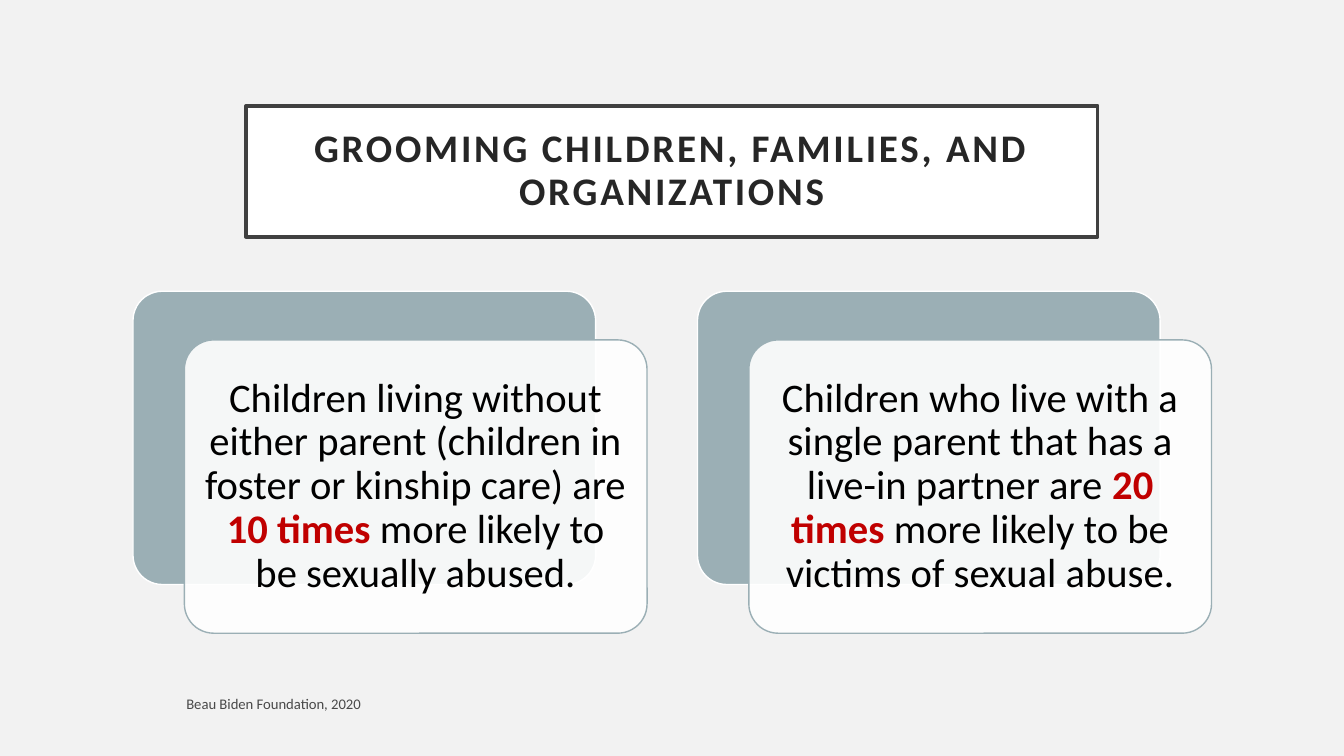
from lxml.etree import SubElement
from pptx import Presentation
from pptx.dml.color import RGBColor
from pptx.enum.shapes import MSO_SHAPE
from pptx.enum.text import MSO_ANCHOR, MSO_AUTO_SIZE, PP_ALIGN
from pptx.oxml.ns import qn
from pptx.util import Pt


def paint(fill, color):
    fill.solid()
    fill.fore_color.rgb = RGBColor.from_string(color)


def set_text(frame, inset, runs, size, color, align):
    frame.word_wrap = True
    frame.auto_size = MSO_AUTO_SIZE.NONE
    frame.vertical_anchor = MSO_ANCHOR.MIDDLE
    frame.margin_left = frame.margin_right = Pt(inset)
    frame.margin_top = frame.margin_bottom = Pt(inset)
    paragraph = frame.paragraphs[0]
    paragraph.alignment = align
    paragraph.line_spacing = 0.9
    paragraph.space_before = Pt(0)
    paragraph.font.name = "Calibri"
    paragraph.font.size = Pt(size)
    paint(paragraph.font.fill, color)
    for text in runs:
        paragraph.add_run().text = text
    return paragraph


presentation = Presentation()
presentation.slide_width = Pt(960)
presentation.slide_height = Pt(540)
slide = presentation.slides.add_slide(presentation.slide_layouts[5])
paint(slide.background.fill, "F2F2F2")

title = slide.shapes.title
title.left, title.top, title.width, title.height = Pt(175.7), Pt(75.6), Pt(608.4), Pt(93.6)
paint(title.fill, "FFFFFF")
paint(title.line.fill, "404040")
title.line.width = Pt(2.5)
heading = set_text(title.text_frame, 14.4, ["GROOMING CHILDREN, FAMILIES, AND ORGANIZATIONS"],
                   27.9, "262626", PP_ALIGN.CENTER)
heading.font.bold = True
heading.runs[0].font._element.set("spc", "200") if hasattr(heading.runs[0].font, "_element") \
    else heading.runs[0]._r.get_or_add_rPr().set("spc", "200")

findings = [
    ("Children living without either parent (children in foster or kinship care) are ",
     "10 times ", "more likely to be sexually abused."),
    ("Children who live with a single parent that has a live-in partner are ",
     "20 times ", "more likely to be victims of sexual abuse."),
]
card_width, card_height = 330.5, 209.5
for column, finding in enumerate(findings):
    left, top = 95 + column * 403.2, 208
    layers = [(left, top, "9BAFB5", "FFFFFF"),
              (left + 36.7, top + 34.8, "FFFFFF", "9BAFB5")]
    for x, y, fill_color, line_color in layers:
        card = slide.shapes.add_shape(MSO_SHAPE.ROUNDED_RECTANGLE, Pt(x), Pt(y),
                                      Pt(card_width), Pt(card_height))
        card.adjustments[0] = 0.1
        card.shadow.inherit = False
        paint(card.fill, fill_color)
        paint(card.line.fill, line_color)
        card.line.width = Pt(1)
    front_color = card._element.spPr.find(qn("a:solidFill"))[0]
    SubElement(front_color, qn("a:alpha"), val="90000")
    statement = set_text(card.text_frame, 8.6, finding, 29, "000000", PP_ALIGN.CENTER)
    multiplier = statement.runs[1].font
    multiplier.bold = True
    paint(multiplier.fill, "C00000")

citation = slide.shapes.add_textbox(Pt(126), Pt(491), Pt(464.4), Pt(25.2))
set_text(citation.text_frame, 7.2, ["Beau Biden Foundation, 2020"], 10.5, "494949", PP_ALIGN.LEFT)

presentation.save("out.pptx")
